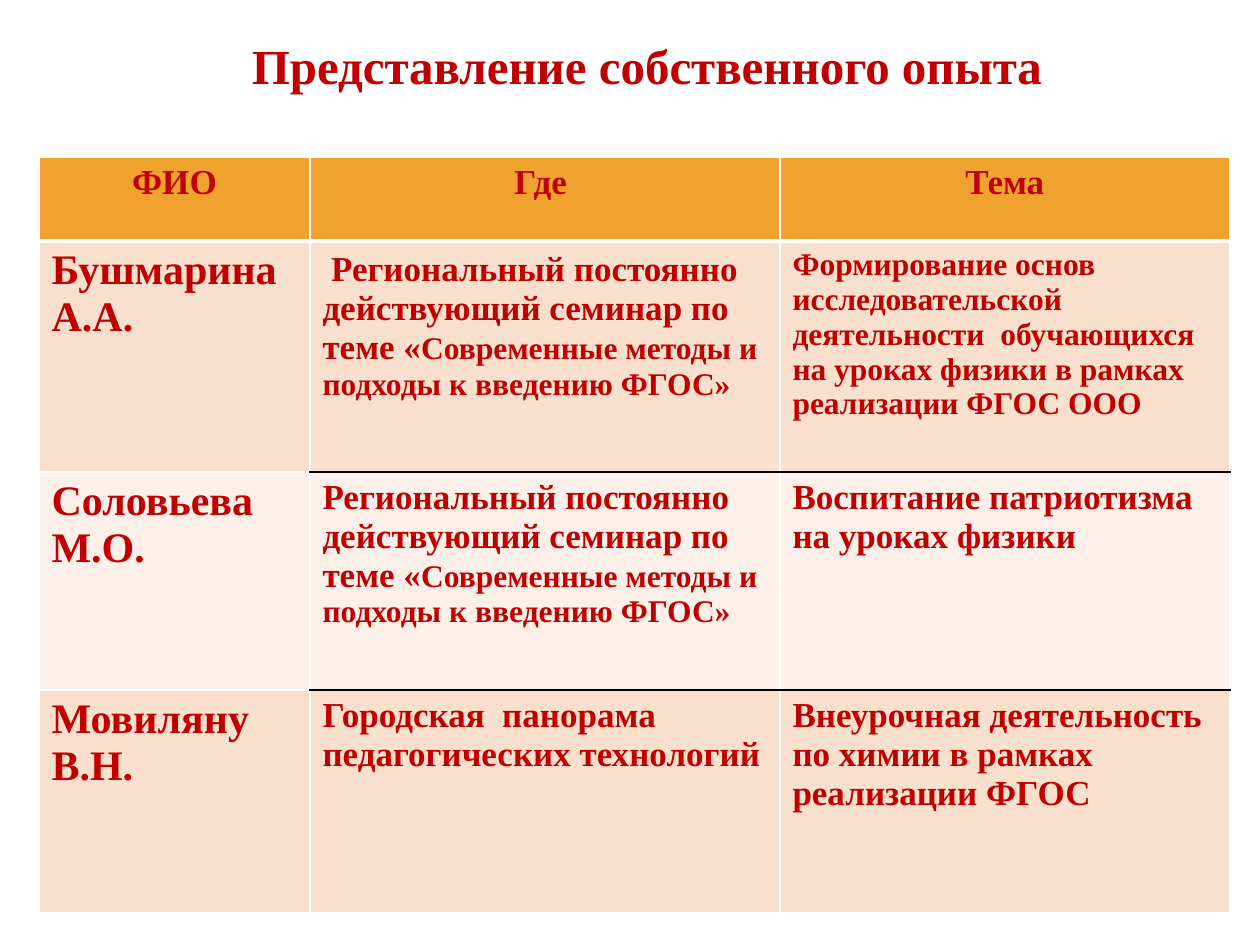
from lxml import etree
from pptx import Presentation
from pptx import util as u
from pptx.dml.color import RGBColor
from pptx.enum import text
from pptx.oxml.ns import qn

PX = 914400 // 126
COLORS = {"text": "C00000", "header": "F0A22E", "odd": "F9E0CD",
          "even": "FCF0E8", "white": "FFFFFF", "black": "000000"}
SERIF = "Times New Roman"


def write(para, words, size=20, font=SERIF):
    span = para.add_run()
    span.text = words
    span.font.size = u.Pt(size)
    span.font.name = font
    span.font.bold = True
    span.font.color.rgb = RGBColor.from_string(COLORS["text"])


def border(cell, side, color, points=1):
    """Add one cell border; side is L, R, T or B, and must come in that order."""
    line = etree.SubElement(cell._tc.get_or_add_tcPr(), qn(f"a:ln{side}"),
                            w=str(u.Pt(points)))
    fill = etree.SubElement(line, qn("a:solidFill"))
    etree.SubElement(fill, qn("a:srgbClr"), val=COLORS[color])


deck = Presentation()
deck.slide_width, deck.slide_height = u.Inches(10), u.Inches(7.5)
page = deck.slides.add_slide(deck.slide_layouts[5])

title = page.shapes.title
title.left, title.top, title.width, title.height = [
    n * PX for n in (227, 29, 837, 72)]
frame = title.text_frame
frame.word_wrap = False
frame.auto_size = text.MSO_AUTO_SIZE.SHAPE_TO_FIT_TEXT
frame.vertical_anchor = text.MSO_ANCHOR.TOP
frame.paragraphs[0].alignment = text.PP_ALIGN.LEFT
write(frame.paragraphs[0], " Представление собственного опыта", size=28)

# Each cell is a list of (words, format) spans.
seminar = [("Региональный постоянно действующий семинар по теме «", {}),
           ("Современные методы и подходы к введению ФГОС»", {"size": 18})]
name = {"size": 24}
rows = [
    [[("ФИО", {})], [("Где ", {})], [("Тема", {})]],
    [[("Бушмарина А.А.", name)],
     [("\u00a0", {"font": "Lato"})] + seminar,
     [("Формирование основ исследовательской  деятельности  обучающихся "
       "на уроках физики в рамках реализации ФГОС ООО", {"size": 18})]],
    [[("Соловьева М.О.", name)],
     seminar,
     [("Воспитание патриотизма на уроках физики", {})]],
    [[("Мовиляну В.Н.", name)],
     [("Городская  панорама педагогических технологий", {})],
     [("Внеурочная деятельность по химии в рамках реализации ФГОС", {})]],
]
widths = [271, 470, 450]
heights = [84, 231, 218, 223]
fills = ["header", "odd", "even", "odd"]

table = page.shapes.add_table(
    len(rows), len(widths), 39 * PX, 157 * PX,
    sum(widths) * PX, sum(heights) * PX).table
for column, width in zip(table.columns, widths):
    column.width = width * PX
for row, height in zip(table.rows, heights):
    row.height = height * PX

for r, row in enumerate(rows):
    for c, spans in enumerate(row):
        cell = table.cell(r, c)
        para = cell.text_frame.paragraphs[0]
        if r == 0:
            para.alignment = text.PP_ALIGN.CENTER
        for words, style in spans:
            write(para, words, **style)
        border(cell, "L", "white")
        border(cell, "R", "white")
        # Black rules separate the people, except under their names.
        border(cell, "T", "black" if c and r > 1 else "white", 3 if r == 1 else 1)
        border(cell, "B", "black" if c and r in (1, 2) else "white", 3 if r == 0 else 1)
        cell.fill.solid()
        cell.fill.fore_color.rgb = RGBColor.from_string(COLORS[fills[r]])

deck.save("out.pptx")
